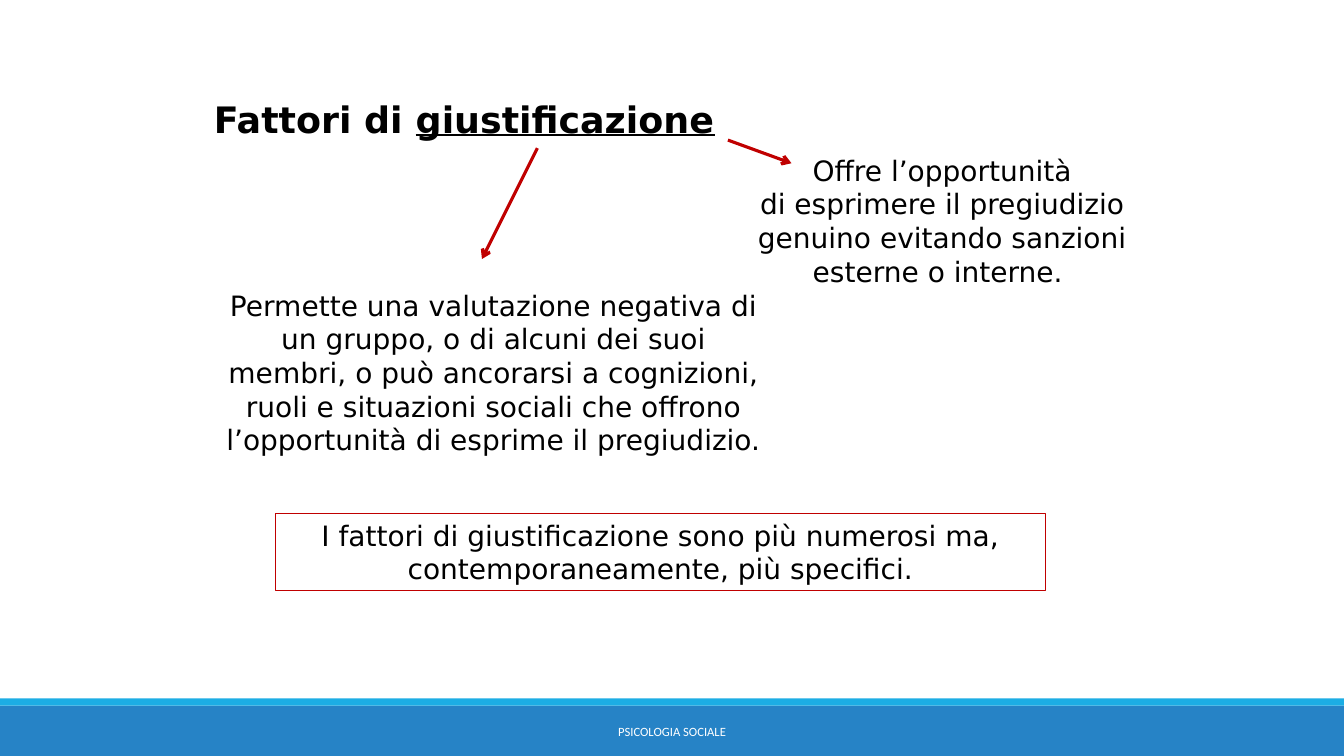
from dataclasses import dataclass

import pptx
import pptx.dml.color
import pptx.enum.shapes
import pptx.enum.text
import pptx.oxml
import pptx.oxml.ns
import pptx.util
from pptx.util import Inches

RGBColor = pptx.dml.color.RGBColor
BLACK = RGBColor(0x00, 0x00, 0x00)
WHITE = RGBColor(0xFF, 0xFF, 0xFF)
RED = RGBColor(0xC0, 0x00, 0x00)
BLUE = RGBColor(0x26, 0x83, 0xC6)
CYAN = RGBColor(0x1C, 0xAD, 0xE4)
ANCHOR = pptx.enum.text.MSO_ANCHOR
NS = pptx.oxml.ns.nsdecls("a")


@dataclass
class Band:
    top: float
    height: float
    color: RGBColor


@dataclass
class Note:
    left: float
    top: float
    width: float
    height: float
    text: str
    size: int = 20
    font: str = "DejaVu Sans"
    color: RGBColor = BLACK
    anchor: ANCHOR = ANCHOR.TOP
    framed: bool = False


@dataclass
class Arrow:
    start: tuple[float, float]
    end: tuple[float, float]


BANDS = [Band(7, 0.5, BLUE), Band(6.93, 0.07, CYAN)]
NOTES = [
    Note(2.1, 2.81, 5.59, 1.78,
         "Permette una valutazione negativa di un gruppo, o di alcuni dei suoi "
         "membri, o può ancorarsi a cognizioni, ruoli e situazioni sociali che "
         "offrono l’opportunità di esprime il pregiudizio."),
    Note(7.02, 1.47, 4.65, 1.45,
         "Offre l’opportunità\ndi esprimere il pregiudizio genuino evitando "
         "sanzioni esterne o interne. "),
    Note(2.73, 5.09, 7.64, 0.77,
         "I fattori di giustificazione sono più numerosi ma, "
         "contemporaneamente, più specifici.", framed=True),
    Note(4.03, 7.06, 5.27, 0.4, "PSICOLOGIA SOCIALE", 9, "Calibri", WHITE,
         ANCHOR.MIDDLE),
]
ARROWS = [Arrow((7.22, 1.39), (7.85, 1.62)), Arrow((5.33, 1.47), (4.78, 2.57))]


def style(frame, size: int, font: str, color: RGBColor) -> None:
    """Centre every paragraph and format its runs."""
    for para in frame.paragraphs:
        para.alignment = pptx.enum.text.PP_ALIGN.CENTER
        for run in para.runs:
            run.font.size = pptx.util.Pt(size)
            run.font.name = font
            run.font.color.rgb = color


def draw_title(slide) -> None:
    title = slide.shapes.title
    title.left, title.top = Inches(2.02), Inches(0.91)
    title.width, title.height = Inches(5.17), Inches(0.54)
    frame = title.text_frame
    frame.word_wrap = False
    frame.auto_size = pptx.enum.text.MSO_AUTO_SIZE.NONE
    frame.vertical_anchor = ANCHOR.TOP
    para = frame.paragraphs[0]
    para.text = "Fattori di "
    key = para.add_run()
    key.text = "giustificazione"
    style(frame, 26, "DejaVu Sans", BLACK)
    for run in para.runs:
        run.font.bold = True
    key.font.underline = True


def draw_band(slide, band: Band, width: int) -> None:
    shape = slide.shapes.add_shape(
        pptx.enum.shapes.MSO_SHAPE.RECTANGLE,
        0, Inches(band.top), width, Inches(band.height))
    shape.shadow.inherit = False
    shape.fill.solid()
    shape.fill.fore_color.rgb = band.color
    shape.line.fill.background()


def draw_note(slide, note: Note) -> None:
    box = slide.shapes.add_textbox(
        Inches(note.left), Inches(note.top),
        Inches(note.width), Inches(note.height))
    frame = box.text_frame
    frame.word_wrap = True
    frame.vertical_anchor = note.anchor
    frame.text = note.text
    style(frame, note.size, note.font, note.color)
    if note.framed:
        box.line.color.rgb = RED
        box.line.width = pptx.util.Pt(0.75)


def draw_arrow(slide, arrow: Arrow) -> None:
    line = slide.shapes.add_connector(
        pptx.enum.shapes.MSO_CONNECTOR.STRAIGHT,
        *map(Inches, arrow.start + arrow.end))
    line.line.color.rgb = RED
    line.line.width = pptx.util.Pt(2.25)
    line.line._get_or_add_ln().append(
        pptx.oxml.parse_xml(f'<a:tailEnd {NS} type="arrow"/>'))
    line._element.spPr.append(pptx.oxml.parse_xml(f"<a:effectLst {NS}/>"))


def main() -> None:
    deck = pptx.Presentation()
    deck.slide_width, deck.slide_height = Inches(13.33), Inches(7.5)
    slide = deck.slides.add_slide(deck.slide_layouts.get_by_name("Title Only"))
    for band in BANDS:
        draw_band(slide, band, deck.slide_width)
    draw_title(slide)
    for note in NOTES:
        draw_note(slide, note)
    for arrow in ARROWS:
        draw_arrow(slide, arrow)
    deck.save("out.pptx")


if __name__ == "__main__":
    main()
